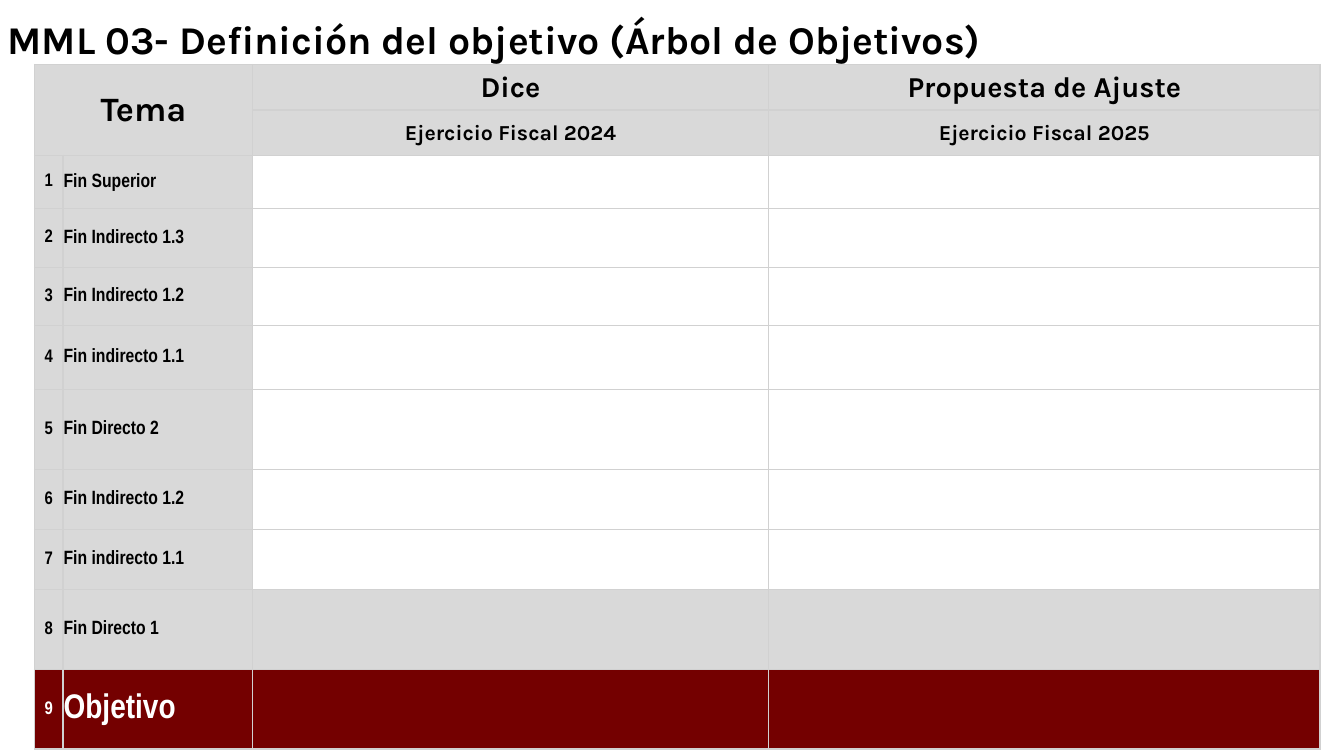
import pptx
import pptx.util
import pptx.dml.color
import pptx.enum.text
import pptx.oxml
import pptx.oxml.ns

Pt = pptx.util.Pt
PP_ALIGN = pptx.enum.text.PP_ALIGN
MIDDLE = pptx.enum.text.MSO_ANCHOR.MIDDLE

COLORS = {"ink": "000000", "paper": "FFFFFF", "grey": "D9D9D9",
          "wine": "740000", "border": "D1D1D1"}
HEADING_FONT, LABEL_FONT = "Karla", "Arial Narrow"
COLUMNS = [26.6, 177.8, 483.8, 517]
HEADER_HEIGHT = 42.5
TOPICS = [
    ("Fin Superior", 49.7), ("Fin Indirecto 1.3", 55.4),
    ("Fin Indirecto 1.2", 54.7), ("Fin indirecto 1.1", 59.8),
    ("Fin Directo 2", 74.9), ("Fin Indirecto 1.2", 56.2),
    ("Fin indirecto 1.1", 56.2), ("Fin Directo 1", 74.9),
    ("Objetivo", 74.9),
]
HEADERS = [(0, 0, "Tema", 32), (0, 2, "Dice", 27), (0, 3, "Propuesta de Ajuste", 27),
           (1, 2, "Ejercicio Fiscal 2024", 20), (1, 3, "Ejercicio Fiscal 2025", 20)]


def rgb(name):
    """Return the named colour."""
    return pptx.dml.color.RGBColor.from_string(COLORS[name])


def write(tf, text, size, font, color="ink", align=PP_ALIGN.LEFT):
    """Write one bold run in the first paragraph of a text frame."""
    p = tf.paragraphs[0]
    p.alignment = align
    r = p.add_run()
    r.text = text
    r.font.size, r.font.name, r.font.bold = Pt(size), font, True
    r.font.color.rgb = rgb(color)
    return p


def style_cell(cell, fill=None):
    """Set the margins, anchor, fill and four borders of a cell."""
    cell.margin_left = cell.margin_right = cell.margin_top = Pt(0.7)
    cell.margin_bottom = Pt(0)
    cell.vertical_anchor = MIDDLE
    if fill:
        cell.fill.solid()
        cell.fill.fore_color.rgb = rgb(fill)
    else:
        cell.fill.background()
    tcPr = cell._tc.get_or_add_tcPr()
    for i, side in enumerate(("lnL", "lnR", "lnT", "lnB")):
        tcPr.insert(i, pptx.oxml.parse_xml(
            f'<a:{side} {pptx.oxml.ns.nsdecls("a")} w="{Pt(1.5)}"><a:solidFill>'
            f'<a:srgbClr val="{COLORS["border"]}"/></a:solidFill></a:{side}>'))


def add_title(s, x, y, w, h):
    """Add the slide title in the given box."""
    tf = s.shapes.add_textbox(Pt(x), Pt(y), Pt(w), Pt(h)).text_frame
    tf.word_wrap = True
    tf.vertical_anchor = MIDDLE
    p = write(tf, "MML 03- Definición del objetivo (Árbol de Objetivos)", 36.8, HEADING_FONT)
    p.line_spacing = 0.9


def add_objectives_table(s, x, y, w, h):
    """Add the table of objectives, scaled to the given box."""
    heights = [HEADER_HEIGHT] * 2 + [height for _, height in TOPICS]
    table = s.shapes.add_table(len(heights), len(COLUMNS), Pt(x), Pt(y), Pt(w), Pt(h)).table
    table.first_row = table.horz_banding = False
    for column, width in zip(table.columns, COLUMNS):
        column.width = Pt(width * w / sum(COLUMNS))
    for row, height in zip(table.rows, heights):
        row.height = Pt(height * h / sum(heights))
    last = len(TOPICS)
    for i, row in enumerate(table.rows, -1):
        for j, cell in enumerate(row.cells):
            fill = "wine" if i == last else "grey" if i < 1 or j < 2 or i == last - 1 else None
            style_cell(cell, fill)
    table.cell(0, 0).merge(table.cell(1, 1))
    for i, j, text, size in HEADERS:
        write(table.cell(i, j).text_frame, text, size, HEADING_FONT, align=PP_ALIGN.CENTER)
    for n, (topic, _) in enumerate(TOPICS, 1):
        color, size = ("paper", 32) if n == last else ("ink", 18)
        write(table.cell(n + 1, 0).text_frame, str(n), 17, LABEL_FONT, color, PP_ALIGN.CENTER)
        write(table.cell(n + 1, 1).text_frame, topic, size, LABEL_FONT, color)


def main():
    """Build and save the slide."""
    prs = pptx.Presentation()
    prs.slide_width, prs.slide_height = Pt(1260), Pt(708.5)
    s = prs.slides.add_slide(prs.slide_layouts[6])
    add_title(s, 0, 0, 1086.5, 79.2)
    add_objectives_table(s, 32.4, 60.5, 1205.2, 641.7)
    prs.save("out.pptx")


if __name__ == "__main__":
    main()
